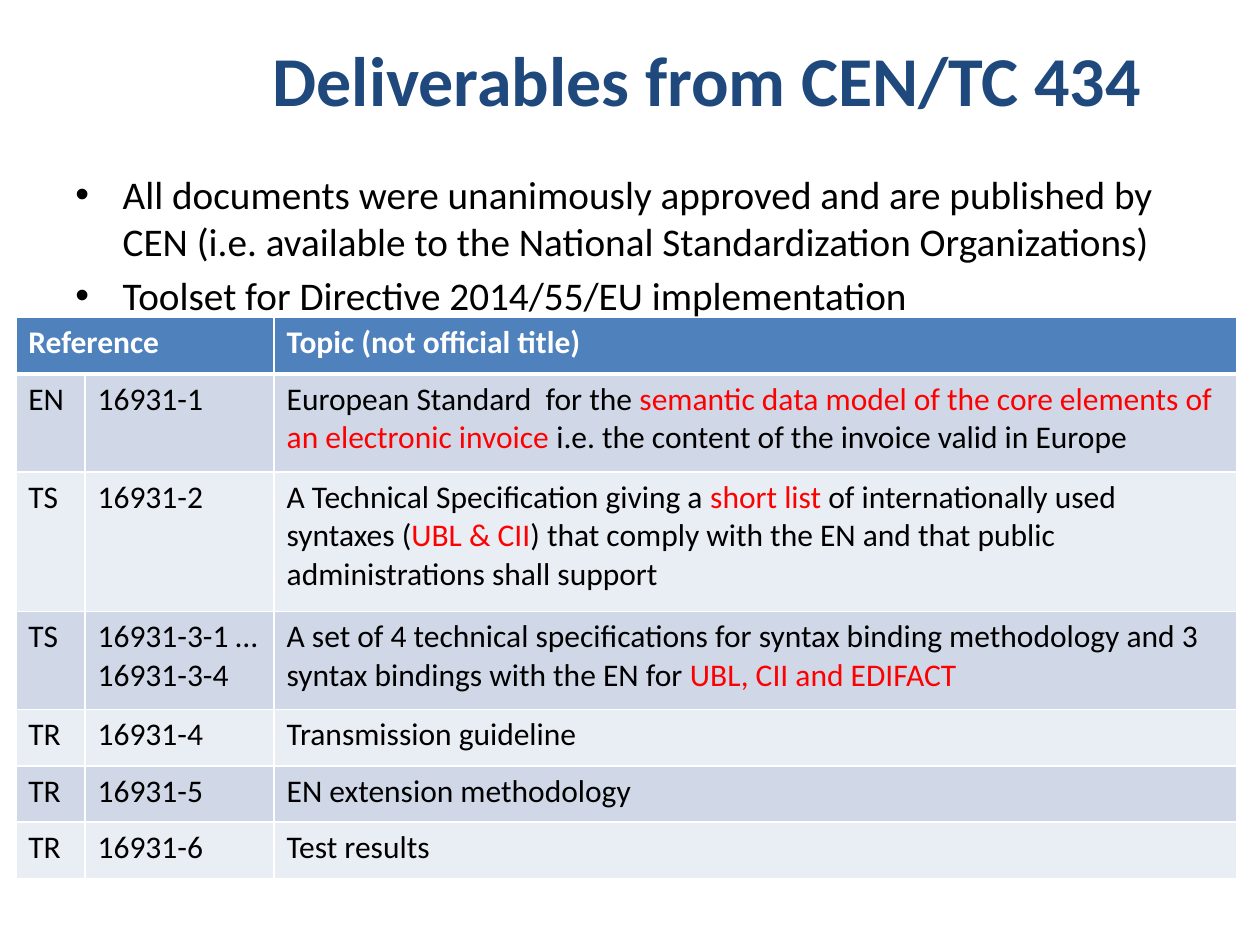
from pptx import Presentation
from pptx.dml.color import RGBColor
from pptx.enum.text import MSO_ANCHOR, PP_ALIGN
from pptx.oxml.ns import qn
from pptx.util import Pt
from lxml.etree import SubElement

TITLE = "Deliverables from CEN/TC 434"
BULLETS = [
    "All documents were unanimously approved and are published by CEN "
    "(i.e. available to the National Standardization Organizations)",
    "Toolset for Directive 2014/55/EU implementation",
]
HEADER = ["Reference", "", "Topic (not official title)"]
ROWS = [
    ("EN", "16931-1", [
        ("European Standard  for the ", "text"),
        ("semantic data model of the core elements of an electronic invoice ", "accent"),
        ("i.e. the content of the invoice valid in Europe", "text")]),
    ("TS", "16931-2", [
        ("A Technical Specification giving a ", "text"),
        ("short list ", "accent"),
        ("of internationally used syntaxes (", "text"),
        ("UBL & CII", "accent"),
        (") that comply with the EN and that public administrations shall support", "text")]),
    ("TS", "16931-3-1 …\n16931-3-4", [
        ("A set of 4 technical specifications for syntax binding methodology "
         "and 3 syntax bindings with the EN for ", "text"),
        ("UBL, CII and EDIFACT", "accent")]),
    ("TR", "16931-4", "Transmission guideline"),
    ("TR", "16931-5", "EN extension methodology"),
    ("TR", "16931-6", "Test results"),
]
COL_WIDTHS = [39.6, 108, 550]
ROW_LINES = [1, 2, 3, 2, 1, 1, 1]
ONE_LINE, EXTRA_LINE = 32.2, 23.8

THEME = {
    "font": "Calibri",
    "title": "1F497D", "text": "000000", "accent": "FF0000", "white": "FFFFFF",
    "header": "4F81BD", "bands": ["D0D8E8", "E9EDF4"],
    "title_size": 40, "bullet_size": 22.4, "table_size": 18,
    "rule": 1, "header_rule": 3,
}


def add_text(p, content, size, color="text", bold=False):
    segments = [(content, color)] if isinstance(content, str) else content
    for text, key in segments:
        for i, line in enumerate(text.split("\n")):
            if i:
                p.add_line_break()
            r = p.add_run()
            r.text = line
            r.font.name = THEME["font"]
            r.font.size = Pt(size)
            r.font.bold = bold
            r.font.color.rgb = RGBColor.from_string(THEME[key])


def add_box(s, left, top, width, height, anchor):
    tf = s.shapes.add_textbox(Pt(left), Pt(top), Pt(width), Pt(height)).text_frame
    tf.word_wrap = True
    tf.vertical_anchor = anchor
    return tf


def set_bullet(p, indent):
    pPr = p._p.get_or_add_pPr()
    pPr.set("marL", str(Pt(indent)))
    pPr.set("indent", str(-Pt(indent)))
    SubElement(pPr, qn("a:buFont"), typeface="Arial")
    SubElement(pPr, qn("a:buChar"), char="•")


def set_borders(cell, top, bottom):
    tcPr = cell._tc.get_or_add_tcPr()
    widths = {"L": THEME["rule"], "R": THEME["rule"], "T": top, "B": bottom}
    for side, width in widths.items():
        ln = SubElement(tcPr, qn(f"a:ln{side}"), w=str(Pt(width)))
        fill = SubElement(ln, qn("a:solidFill"))
        SubElement(fill, qn("a:srgbClr"), val=THEME["white"])


def add_deliverables(s, left, top):
    heights = [ONE_LINE + EXTRA_LINE * (n - 1) for n in ROW_LINES]
    table = s.shapes.add_table(
        len(heights), len(COL_WIDTHS), Pt(left), Pt(top),
        Pt(sum(COL_WIDTHS)), Pt(sum(heights))).table
    for col, width in zip(table.columns, COL_WIDTHS):
        col.width = Pt(width)
    for i, (height, values) in enumerate(zip(heights, [HEADER, *ROWS])):
        table.rows[i].height = Pt(height)
        is_header = i == 0
        fill = THEME["header"] if is_header else THEME["bands"][(i - 1) % 2]
        for j, value in enumerate(values):
            cell = table.cell(i, j)
            set_borders(cell,
                        THEME["header_rule" if i == 1 else "rule"],
                        THEME["header_rule" if is_header else "rule"])
            cell.fill.solid()
            cell.fill.fore_color.rgb = RGBColor.from_string(fill)
            if value:
                add_text(cell.text_frame.paragraphs[0], value, THEME["table_size"],
                         color="white" if is_header else "text", bold=is_header)
    table.cell(0, 0).merge(table.cell(0, 1))


def main():
    prs = Presentation()
    prs.slide_width, prs.slide_height = Pt(720), Pt(540)
    s = prs.slides.add_slide(prs.slide_layouts[6])

    tf = add_box(s, 88, 0, 632, 90, MSO_ANCHOR.MIDDLE)
    p = tf.paragraphs[0]
    p.alignment = PP_ALIGN.CENTER
    add_text(p, TITLE, THEME["title_size"], color="title", bold=True)

    add_deliverables(s, 9, 181.5)

    tf = add_box(s, 36, 93.6, 648, 97.2, MSO_ANCHOR.TOP)
    for i, text in enumerate(BULLETS):
        p = tf.add_paragraph() if i else tf.paragraphs[0]
        set_bullet(p, 27)
        if i:
            p.space_before = Pt(4)
        add_text(p, text, THEME["bullet_size"])

    prs.save("out.pptx")


if __name__ == "__main__":
    main()
